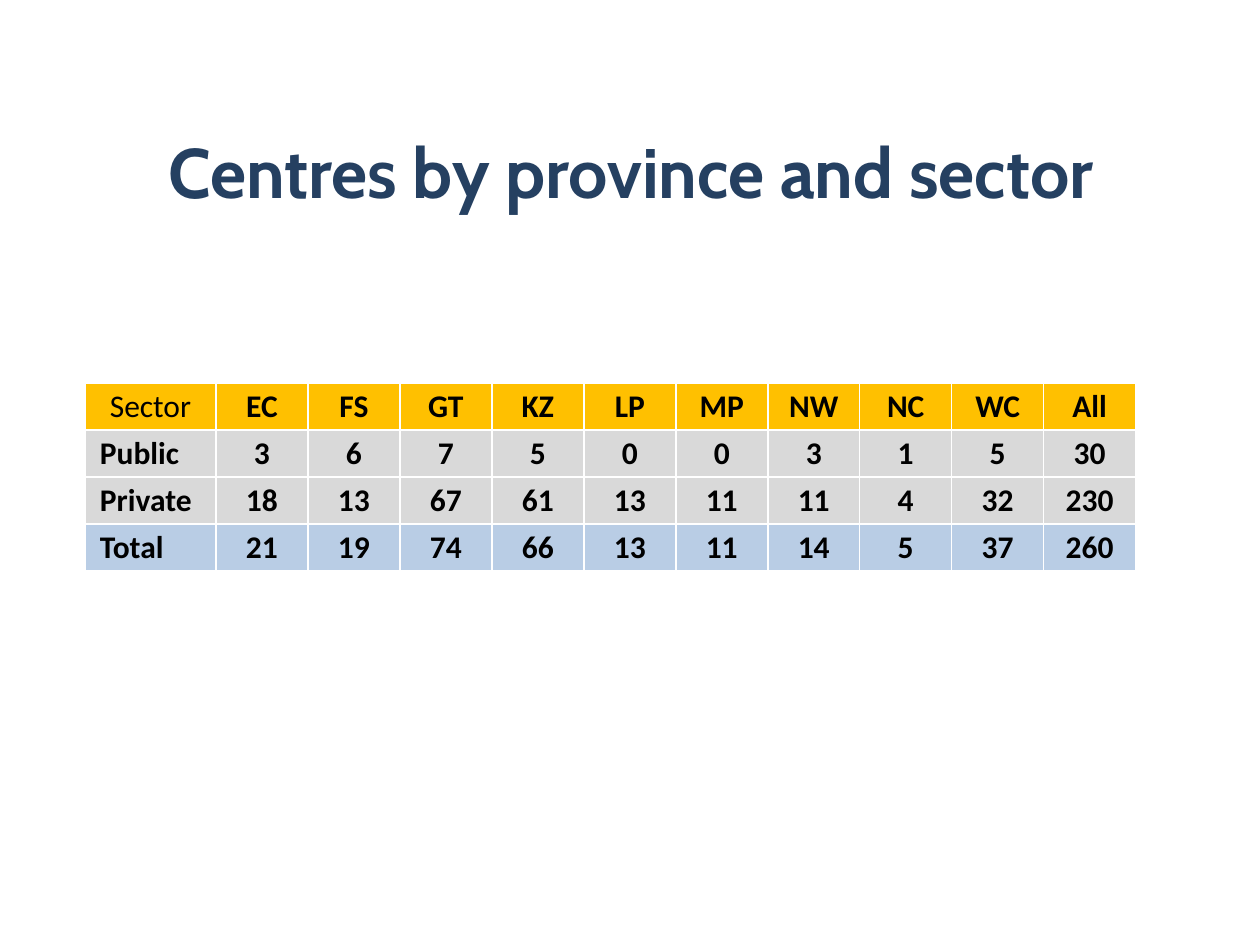
from lxml.etree import SubElement
from pptx import Presentation
from pptx.dml.color import RGBColor
from pptx.enum.text import MSO_ANCHOR, PP_ALIGN
from pptx.oxml.ns import qn
from pptx.util import Pt

EMU_PER_INCH, PX_PER_INCH = 914400, 126

NAVY = RGBColor(0x25, 0x40, 0x61)
BLACK = RGBColor(0x00, 0x00, 0x00)
WHITE = RGBColor(0xFF, 0xFF, 0xFF)
AMBER = RGBColor(0xFF, 0xC0, 0x00)
GREY = RGBColor(0xD9, 0xD9, 0xD9)
PALE_BLUE = RGBColor(0xB9, 0xCD, 0xE5)

TITLE_FONT = {"name": "Cabin", "size": Pt(40), "bold": True}
CELL_FONT = {"name": "Calibri", "size": Pt(18)}

SECTOR_WIDTH, PROVINCE_WIDTH, ROW_HEIGHT = 131, 92, 47
SECTOR_INDENT = 15

# Each row: fill colour, then the values from left to right
ROWS = [
    (AMBER, ["Sector", "EC", "FS", "GT", "KZ", "LP", "MP", "NW", "NC", "WC", "All"]),
    (GREY, ["Public", 3, 6, 7, 5, 0, 0, 3, 1, 5, 30]),
    (GREY, ["Private", 18, 13, 67, 61, 13, 11, 11, 4, 32, 230]),
    (PALE_BLUE, ["Total", 21, 19, 74, 66, 13, 11, 14, 5, 37, 260]),
]


def px(length):
    return round(length * EMU_PER_INCH / PX_PER_INCH)


def set_attributes(target, values):
    for name, value in values.items():
        setattr(target, name, value)


def write_text(text_frame, text, alignment, color, font_values):
    paragraph = text_frame.paragraphs[0]
    paragraph.alignment = alignment
    run = paragraph.add_run()
    run.text = str(text)
    set_attributes(run.font, font_values)
    run.font.color.rgb = color


def add_title(slide, text, left, top, width, height):
    shape = slide.shapes.add_textbox(px(left), px(top), px(width), px(height))
    set_attributes(shape.text_frame,
                   {"word_wrap": True, "vertical_anchor": MSO_ANCHOR.MIDDLE})
    write_text(shape.text_frame, text, PP_ALIGN.CENTER, NAVY, TITLE_FONT)


def add_borders(cell, color, width):
    properties = cell._tc.get_or_add_tcPr()
    for side in ("a:lnL", "a:lnR", "a:lnT", "a:lnB"):
        line = SubElement(properties, qn(side), w=str(width))
        fill = SubElement(line, qn("a:solidFill"))
        SubElement(fill, qn("a:srgbClr"), val=str(color))


def format_cell(cell, value, fill_color, is_header, is_sector):
    is_row_label = is_sector and not is_header
    set_attributes(cell, {
        "vertical_anchor": MSO_ANCHOR.MIDDLE,
        "margin_left": px(SECTOR_INDENT if is_row_label else 1),
        "margin_right": px(1),
        "margin_top": px(1),
        "margin_bottom": 0,
    })
    add_borders(cell, WHITE, Pt(1))
    cell.fill.solid()
    cell.fill.fore_color.rgb = fill_color
    alignment = PP_ALIGN.LEFT if is_row_label else PP_ALIGN.CENTER
    bold = not (is_header and is_sector)
    write_text(cell.text_frame, value, alignment, BLACK, {**CELL_FONT, "bold": bold})


def add_sector_table(slide, rows, left, top):
    widths = [SECTOR_WIDTH] + [PROVINCE_WIDTH] * (len(rows[0][1]) - 1)
    table = slide.shapes.add_table(
        len(rows), len(widths), px(left), px(top),
        px(sum(widths)), px(ROW_HEIGHT * len(rows))).table
    for column, width in zip(table.columns, widths):
        column.width = px(width)
    for row_index, (fill_color, values) in enumerate(rows):
        table.rows[row_index].height = px(ROW_HEIGHT)
        for column_index, value in enumerate(values):
            format_cell(table.cell(row_index, column_index), value, fill_color,
                        row_index == 0, column_index == 0)


def main():
    presentation = Presentation()
    set_attributes(presentation, {"slide_width": px(1260), "slide_height": px(945)})
    slide = presentation.slides.add_slide(presentation.slide_layouts[6])

    # Heading
    add_title(slide, "Centres by province and sector", 64, 106, 1134, 129)

    # Centre counts
    add_sector_table(slide, ROWS, 85, 383)

    presentation.save("out.pptx")


if __name__ == "__main__":
    main()
